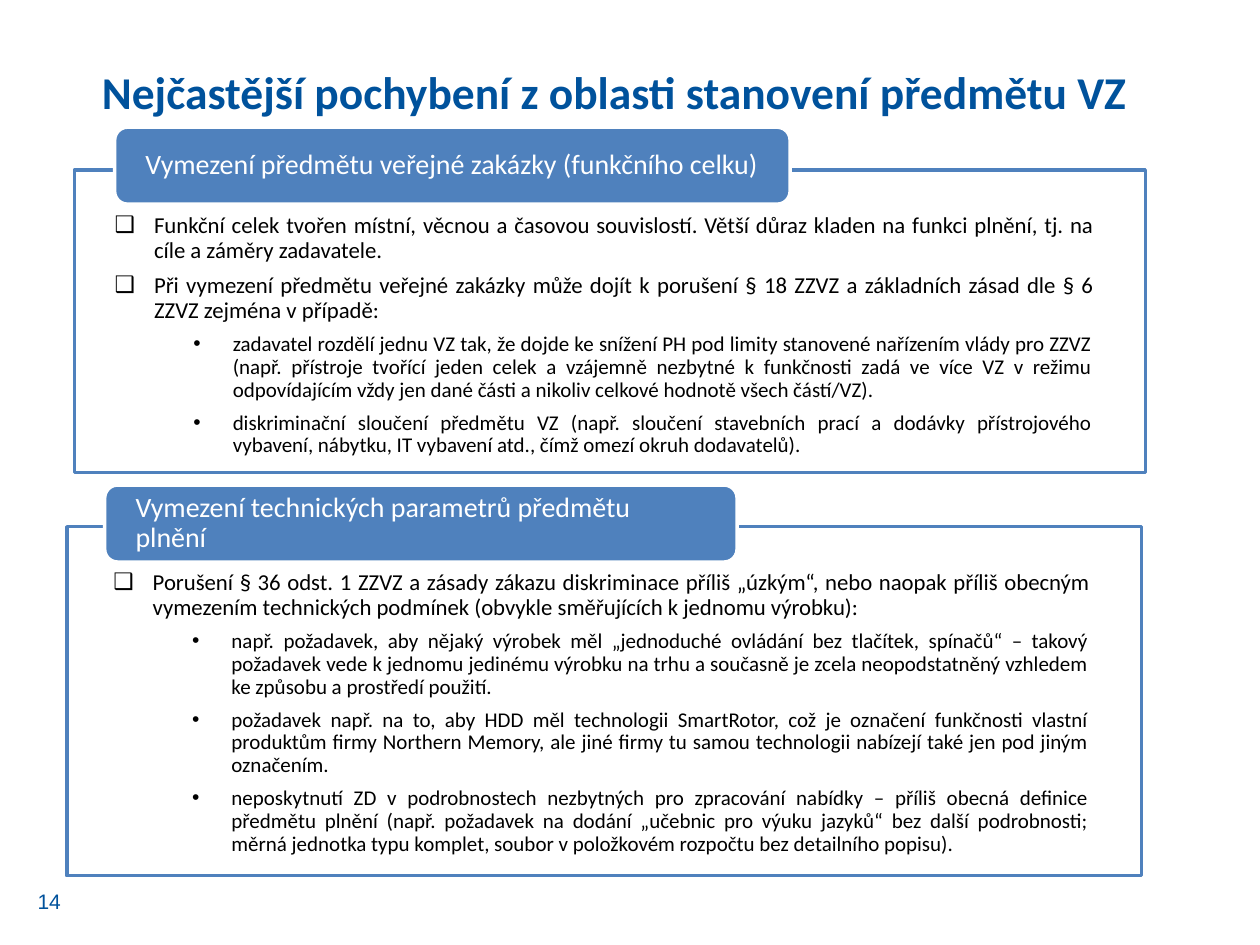
from pptx import Presentation
from pptx.dml.color import RGBColor
from pptx.enum import shapes, text
from pptx.oxml.ns import qn
from pptx.util import Pt
from lxml import etree

COLORS = {"heading": "00529C", "accent": "4F81BD", "paper": "FFFFFF", "ink": "000000"}
# kind of point: (bullet, indent level, left margin, font size)
POINT_STYLES = {"main": ("❑", 1, 22.5, 13), "detail": ("•", 3, 67.5, 12)}
HANGING = 22.5

# frame: left, top, width, height; tab and text: distance from the frame's left edge
PANELS = [
    {
        "frame": (42.5, 97.2, 612, 172.8),
        "tab_offset": 23, "tab_width": 386, "tab_rise": 24.5, "text_offset": 23,
        "heading": "Vymezení předmětu veřejné zakázky (funkčního celku)",
        "points": [
            ("main", "Funkční celek tvořen místní, věcnou a časovou souvislostí. Větší důraz "
                     "kladen na funkci plnění, tj. na cíle a záměry zadavatele."),
            ("main", "Při vymezení předmětu veřejné zakázky může dojít k porušení § 18 ZZVZ "
                     "a základních zásad dle § 6 ZZVZ zejména v případě:"),
            ("detail", "zadavatel rozdělí jednu VZ tak, že dojde ke snížení PH pod limity "
                       "stanovené nařízením vlády pro ZZVZ (např. přístroje tvořící jeden celek "
                       "a vzájemně nezbytné k funkčnosti zadá ve více VZ v režimu odpovídajícím "
                       "vždy jen dané části a nikoliv celkové hodnotě všech částí/VZ)."),
            ("detail", "diskriminační sloučení předmětu VZ (např. sloučení stavebních prací "
                       "a dodávky přístrojového vybavení, nábytku, IT vybavení atd., čímž omezí "
                       "okruh dodavatelů)."),
        ],
    },
    {
        "frame": (38.2, 301, 614.2, 199.4),
        "tab_offset": 21.6, "tab_width": 361.4, "tab_rise": 23.8, "text_offset": 26.6,
        "heading": "Vymezení technických parametrů předmětu plnění",
        "points": [
            ("main", "Porušení § 36 odst. 1 ZZVZ a zásady zákazu diskriminace příliš „úzkým“, "
                     "nebo naopak příliš obecným vymezením technických podmínek (obvykle "
                     "směřujících k jednomu výrobku):"),
            ("detail", "např. požadavek, aby nějaký výrobek měl „jednoduché ovládání bez "
                       "tlačítek, spínačů“ – takový požadavek vede k jednomu jedinému výrobku "
                       "na trhu a současně je zcela neopodstatněný vzhledem ke způsobu "
                       "a prostředí použití."),
            ("detail", "požadavek např. na to, aby HDD měl technologii SmartRotor, což je "
                       "označení funkčnosti vlastní produktům firmy Northern Memory, ale jiné "
                       "firmy tu samou technologii nabízejí také jen pod jiným označením."),
            ("detail", "neposkytnutí ZD v podrobnostech nezbytných pro zpracování nabídky – "
                       "příliš obecná definice předmětu plnění (např. požadavek na dodání "
                       "„učebnic pro výuku jazyků“ bez další podrobnosti; měrná jednotka typu "
                       "komplet, soubor v položkovém rozpočtu bez detailního popisu)."),
        ],
    },
]


def rgb(name):
    return RGBColor.from_string(COLORS[name])


def style_font(paragraph, size, color, name="Calibri", bold=False):
    font = paragraph.font
    font.size, font.name, font.bold = Pt(size), name, bold
    font.color.rgb = rgb(color)


def set_margins(frame, left=0, top=0, right=0, bottom=0):
    frame.margin_left, frame.margin_top = Pt(left), Pt(top)
    frame.margin_right, frame.margin_bottom = Pt(right), Pt(bottom)


def add_block(slide, kind, box, fill, line):
    block = slide.shapes.add_shape(kind, *map(Pt, box))
    block.shadow.inherit = False
    block.fill.solid()
    block.fill.fore_color.rgb = rgb(fill)
    block.line.color.rgb = rgb(line)
    block.line.width = Pt(2)
    return block


def make_translucent(block, percent):
    color = block.fill._xPr.find(qn("a:solidFill"))[0]
    etree.SubElement(color, qn("a:alpha"), val=str(percent * 1000))


def add_points(slide, box, points):
    body = slide.shapes.add_textbox(*map(Pt, box)).text_frame
    body.word_wrap = True
    set_margins(body)
    for index, (kind, wording) in enumerate(points):
        bullet, level, margin, size = POINT_STYLES[kind]
        point = body.paragraphs[0] if index == 0 else body.add_paragraph()
        point.text = wording
        point.level = level
        point.alignment = text.PP_ALIGN.JUSTIFY
        point.line_spacing = 0.9
        point.space_after = Pt(6)
        properties = point._p.get_or_add_pPr()
        properties.set("marL", str(Pt(margin)))
        properties.set("indent", str(-Pt(HANGING)))
        etree.SubElement(properties, qn("a:buFont"), typeface="Arial")
        etree.SubElement(properties, qn("a:buChar"), char=bullet)
        style_font(point, size, "ink")


def add_panel(slide, frame, tab_offset, tab_width, tab_rise, text_offset, heading, points):
    """Outlined frame with bulleted points and a heading tab across its top edge."""
    left, top, width, height = frame
    outline = add_block(slide, shapes.MSO_SHAPE.RECTANGLE, frame, "paper", "accent")
    make_translucent(outline, 90)
    add_points(slide, (left + text_offset, top + 25.2,
                       width - text_offset - 30.2, height - 31), points)

    tab = add_block(slide, shapes.MSO_SHAPE.ROUNDED_RECTANGLE,
                    (left + tab_offset, top - tab_rise, tab_width, 44), "accent", "paper")
    label = tab.text_frame
    label.word_wrap = True
    label.vertical_anchor = text.MSO_ANCHOR.MIDDLE
    set_margins(label, left=15.5, right=15.5)
    caption = label.paragraphs[0]
    caption.text = heading
    caption.alignment = text.PP_ALIGN.LEFT
    caption.line_spacing = 0.9
    style_font(caption, 16, "paper")


def place_title(slide, box, wording):
    title = slide.shapes.title
    title.left, title.top, title.width, title.height = map(Pt, box)
    title.text_frame.text = wording
    title.text_frame.vertical_anchor = text.MSO_ANCHOR.MIDDLE
    paragraph = title.text_frame.paragraphs[0]
    paragraph.alignment = text.PP_ALIGN.CENTER
    style_font(paragraph, 26, "heading", bold=True)


def add_page_number(slide, box, number):
    frame = slide.shapes.add_textbox(*map(Pt, box)).text_frame
    frame.word_wrap = True
    frame.vertical_anchor = text.MSO_ANCHOR.MIDDLE
    frame.text = number
    style_font(frame.paragraphs[0], 12, "heading", name="Arial")


def main():
    presentation = Presentation()
    presentation.slide_width, presentation.slide_height = Pt(720), Pt(540)
    slide = presentation.slides.add_slide(presentation.slide_layouts[5])
    place_title(slide, (38.2, 31.7, 626.4, 41),
                "Nejčastější pochybení z oblasti stanovení předmětu VZ")
    for panel in PANELS:
        add_panel(slide, **panel)
    add_page_number(slide, (14.4, 500.4, 39.6, 28.8), "14")
    presentation.save("out.pptx")


if __name__ == "__main__":
    main()
